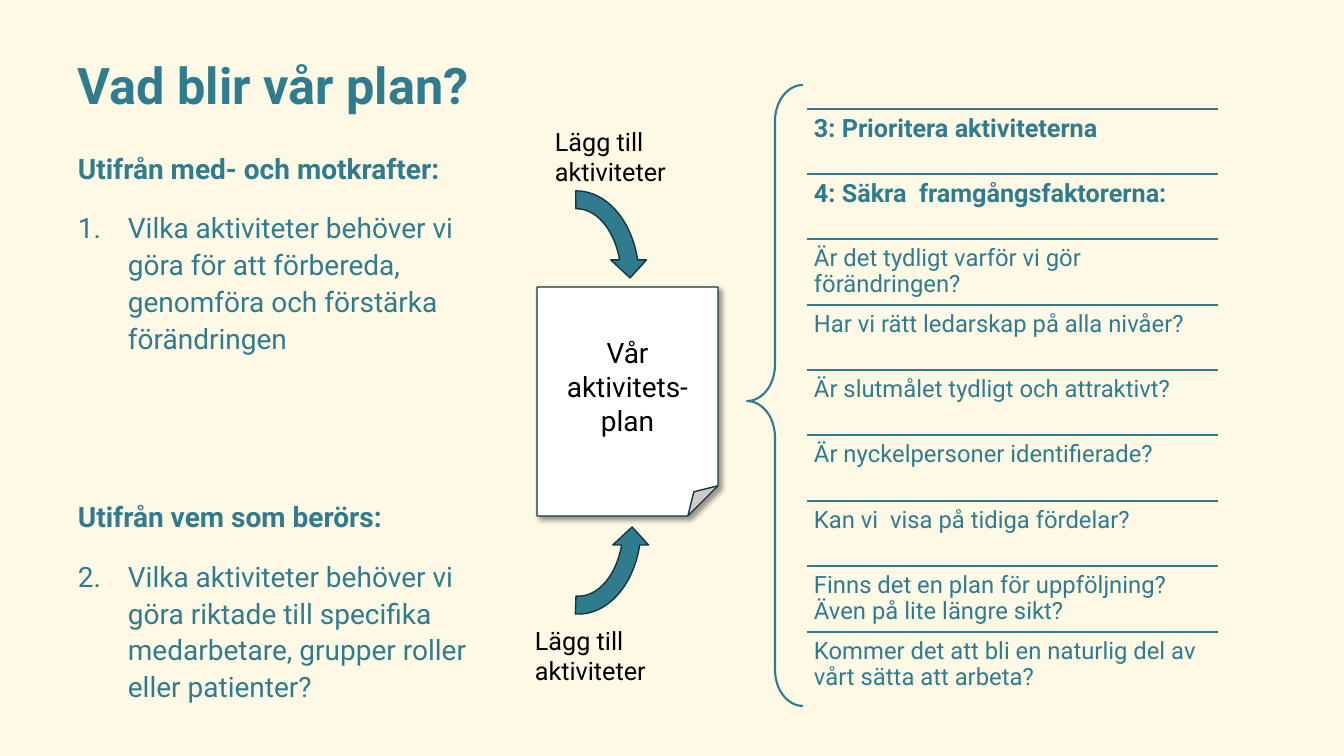
import pptx
import pptx.util
import pptx.dml.color
import pptx.enum.shapes
import pptx.enum.text
import pptx.oxml.ns
from lxml import etree

TEAL = pptx.dml.color.RGBColor(0x30, 0x7C, 0x8E)
DARK = pptx.dml.color.RGBColor(0x15, 0x36, 0x3E)
BLACK = pptx.dml.color.RGBColor(0, 0, 0)
WHITE = pptx.dml.color.RGBColor(255, 255, 255)
CREAM = pptx.dml.color.RGBColor(0xFD, 0xF9, 0xE4)
SCALE = 914400 / 100.8  # EMU per px
Pt = pptx.util.Pt
KIND = pptx.enum.shapes.MSO_SHAPE
ANCHOR = pptx.enum.text.MSO_ANCHOR
qn = pptx.oxml.ns.qn


def px(*nums):
    return [round(n * SCALE) for n in nums]


def write(para, text, size, color, bold=False, space=None):
    run = para.add_run()
    run.text = text
    run.font.name = "Roboto"
    run.font.size = Pt(size)
    run.font.bold = bold
    run.font.color.rgb = color
    if space:
        para.line_spacing = space


deck = pptx.Presentation()
deck.slide_width, deck.slide_height = px(1344, 756)
slide = deck.slides.add_slide(deck.slide_layouts[6])
slide.background.fill.solid()
slide.background.fill.fore_color.rgb = CREAM
shapes = slide.shapes

# Title
frame = shapes.add_textbox(*px(68, 39, 1210, 81)).text_frame
frame.word_wrap = True
frame.vertical_anchor = ANCHOR.BOTTOM
write(frame.paragraphs[0], "Vad blir vår plan?", 36, TEAL, True, 1.1)

# Questions on the left: text, number, space before
asks = [
    ("Utifrån med- och motkrafter:", 0, 0),
    ("Vilka aktiviteter behöver vi göra för att förbereda, "
     "genomföra och förstärka förändringen", 1, 16),
    ("Utifrån vem som berörs:", 0, 101),
    ("Vilka aktiviteter behöver vi göra riktade till specifika "
     "medarbetare, grupper roller eller patienter?", 2, 16),
]
frame = shapes.add_textbox(*px(68, 143, 454, 532)).text_frame
frame.word_wrap = True
for i, (text, num, gap) in enumerate(asks):
    para = frame.add_paragraph() if i else frame.paragraphs[0]
    write(para, text, 20, TEAL, not num, 1.1)
    para.space_before = Pt(gap)
    if num:
        props = para._p.get_or_add_pPr()
        indent = px(50)[0]
        props.set("marL", str(indent))
        props.set("indent", str(-indent))
        tint = etree.SubElement(props, qn("a:buClr"))
        etree.SubElement(tint, qn("a:srgbClr"), val=str(TEAL))
        etree.SubElement(props, qn("a:buAutoNum"), type="arabicPeriod", startAt=str(num))

# Ruled list on the right: nine equal rows
rows = [
    "3: Prioritera aktiviteterna",
    "4: Säkra  framgångsfaktorerna:",
    "Är det tydligt varför vi gör förändringen?",
    "Har vi rätt ledarskap på alla nivåer?",
    "Är slutmålet tydligt och attraktivt?",
    "Är nyckelpersoner identifierade?",
    "Kan vi  visa på tidiga fördelar?",
    "Finns det en plan för uppföljning? Även på lite längre sikt?",
    "Kommer det att bli en naturlig del av vårt sätta att arbeta?",
]
LEFT, WIDE, FIRST, LAST = 807, 411, 109, 632
for i, text in enumerate(rows):
    top = FIRST + i * (LAST - FIRST) // (len(rows) - 1)
    rule = shapes.add_connector(
        pptx.enum.shapes.MSO_CONNECTOR.STRAIGHT, *px(LEFT, top, LEFT + WIDE, top))
    rule.line.color.rgb = TEAL
    rule.line.width = Pt(1)
    etree.SubElement(rule._element.spPr, qn("a:effectLst"))
    frame = shapes.add_textbox(*px(LEFT, top, WIDE, 65)).text_frame
    frame.word_wrap = True
    frame.margin_left, frame.margin_top, frame.margin_right, frame.margin_bottom = px(7, 7, 7, 7)
    head = i < 2
    write(frame.paragraphs[0], text, 18 if head else 17, TEAL, head, 0.9)

# Plan sheet with a soft shadow
sheet = shapes.add_shape(KIND.FOLDED_CORNER, *px(537, 287, 181, 229))
sheet.fill.solid()
sheet.fill.fore_color.rgb = WHITE
sheet.line.color.rgb = DARK
sheet.line.width = Pt(1)
sheet.shadow.inherit = False
shade = etree.SubElement(
    sheet._element.spPr.find(qn("a:effectLst")), qn("a:outerShdw"),
    blurRad=str(Pt(4)), dist=str(Pt(3)), dir="2700000", algn="tl", rotWithShape="0")
tint = etree.SubElement(shade, qn("a:srgbClr"), val=str(BLACK))
etree.SubElement(tint, qn("a:alpha"), val="40000")
frame = sheet.text_frame
frame.word_wrap = True
frame.vertical_anchor = ANCHOR.MIDDLE
frame.paragraphs[0].alignment = pptx.enum.text.PP_ALIGN.CENTER
write(frame.paragraphs[0], "Vår aktivitets-plan", 20, BLACK)

# Curved arrows and their labels: arrow place, start angle, flip, label place
for x, y, start, flip, left, top in [
        (505, 182, 161.704, False, 545, 121),
        (507, 431, 160.764, True, 525, 620)]:
    arrow = shapes.add_shape(KIND.CIRCULAR_ARROW, *px(x, y, 143, 192))
    for i, val in enumerate([0.125, 11.423, 204.577, start, 0.125]):
        arrow.adjustments[i] = val
    arrow.fill.solid()
    arrow.fill.fore_color.rgb = TEAL
    arrow.line.color.rgb = DARK
    arrow.line.width = Pt(1)
    arrow.shadow.inherit = False
    if flip:
        arrow._element.spPr.find(qn("a:xfrm")).set("flipV", "1")
    frame = shapes.add_textbox(*px(left, top, 154, 72)).text_frame
    frame.word_wrap = True
    write(frame.paragraphs[0], "Lägg till aktiviteter", 18, BLACK)

# Brace
brace = shapes.add_shape(KIND.LEFT_BRACE, *px(747, 85, 56, 621))
brace.adjustments[0] = 0.646
brace.adjustments[1] = 0.509
brace.fill.background()
brace.line.color.rgb = TEAL
brace.line.width = Pt(1.5)
brace.shadow.inherit = False

deck.save("out.pptx")
